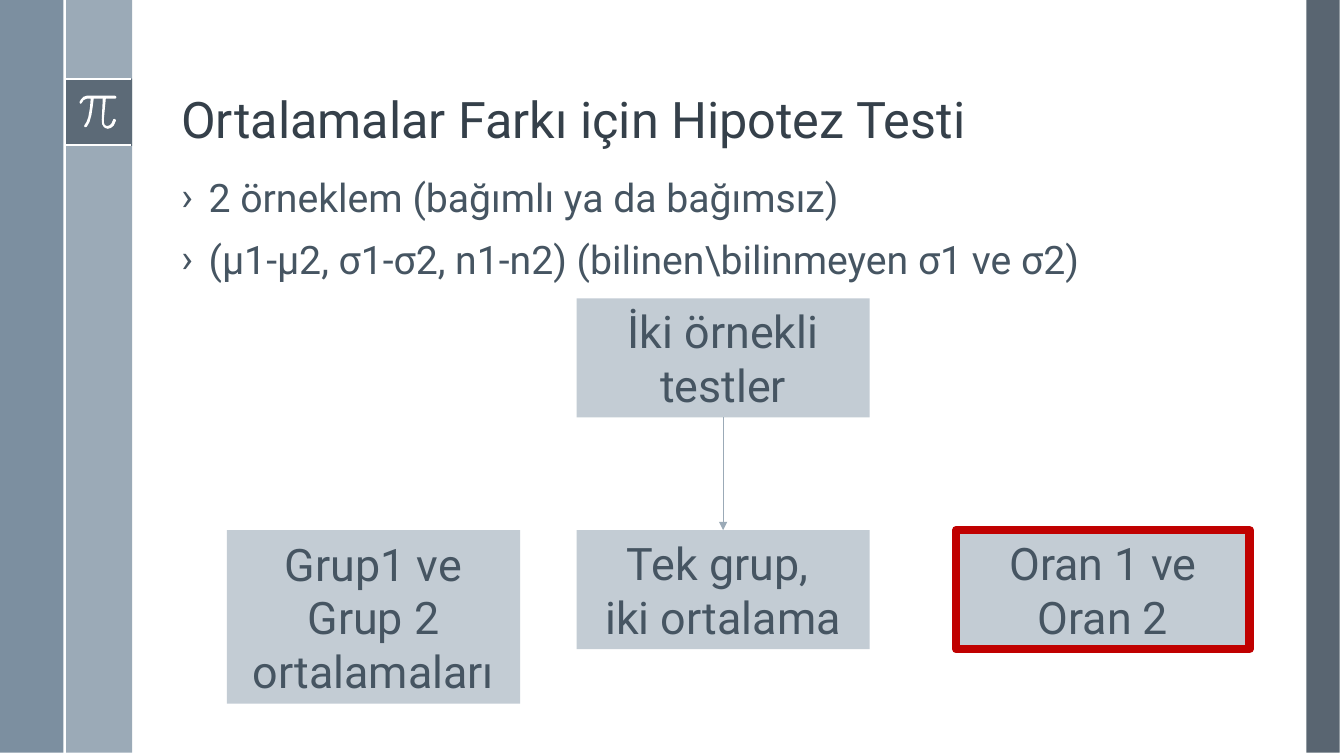
from dataclasses import dataclass

from lxml import etree
from pptx import Presentation
from pptx.dml.color import RGBColor
from pptx.enum.shapes import MSO_CONNECTOR, MSO_SHAPE
from pptx.enum.text import MSO_ANCHOR, MSO_AUTO_SIZE, PP_ALIGN
from pptx.oxml.ns import qn
from pptx.util import Cm, Pt

RECT = MSO_SHAPE.RECTANGLE
STRAIGHT = MSO_CONNECTOR.STRAIGHT
TOP, MIDDLE, BOTTOM = MSO_ANCHOR.TOP, MSO_ANCHOR.MIDDLE, MSO_ANCHOR.BOTTOM
LEFT, CENTER = PP_ALIGN.LEFT, PP_ALIGN.CENTER
GROW = MSO_AUTO_SIZE.SHAPE_TO_FIT_TEXT


@dataclass(frozen=True)
class Theme:
    font: str = "Roboto"
    title_size: int = 36
    body_size: int = 28
    box_size: int = 32
    title: str = "35404A"
    text: str = "465562"
    dark: str = "475562"
    steel: str = "6A8093"
    pale: str = "9BAAB7"
    box: str = "C3CCD4"
    white: str = "FFFFFF"
    highlight: str = "C00000"


THEME = Theme()

# Outline of the pi sign, in thousandths of an inch
PI_UNIT = Cm(0.00254)
PI_OUTLINE = [
    (1140, 950), (860, 950), (827, 962), (803, 988), (790, 1012), (792, 1024),
    (802, 1030), (812, 1022), (830, 993), (860, 980), (900, 980), (893, 1070),
    (876, 1165), (858, 1212), (840, 1240), (835, 1252), (842, 1262), (860, 1260),
    (888, 1212), (908, 1140), (920, 1060), (930, 980), (1020, 980), (1010, 1190),
    (1014, 1232), (1030, 1260), (1048, 1272), (1070, 1278), (1100, 1270),
    (1128, 1247), (1150, 1200), (1148, 1187), (1138, 1180), (1125, 1184),
    (1108, 1222), (1092, 1242), (1070, 1250), (1052, 1248), (1040, 1240),
    (1032, 1220), (1030, 1190), (1050, 980), (1140, 980), (1152, 975), (1155, 965),
    (1150, 954),
]

BOX_WIDTH = 7.39
CENTER_X = 14.53
ROOT_Y, ROW_Y = 7.52, 13.36
SHORT, TALL = 3.0, 4.37


def rgb(code):
    return RGBColor.from_string(code)


def apply_format(target, values):
    for name, value in values.items():
        setattr(target, name, value)


def paint(shape, color, opacity=100):
    """Give a shape a flat fill with no outline or shadow."""
    shape.shadow.inherit = False
    shape.fill.solid()
    shape.fill.fore_color.rgb = rgb(color)
    shape.line.fill.background()
    if opacity < 100:
        color_node = shape.fill._xPr.find(".//" + qn("a:srgbClr"))
        etree.SubElement(color_node, qn("a:alpha"), val=str(opacity * 1000))


def add_panel(slide, x, y, width, height, color, opacity=100):
    panel = slide.shapes.add_shape(RECT, Cm(x), Cm(y), Cm(width), Cm(height))
    paint(panel, color, opacity)
    return panel


def add_rule(slide, start, end, color, weight, arrow=False):
    rule = slide.shapes.add_connector(STRAIGHT, *map(Cm, start + end))
    rule.line.color.rgb = rgb(color)
    rule.line.width = Pt(weight)
    properties = rule.line._get_or_add_ln()
    if arrow:
        etree.SubElement(properties, qn("a:tailEnd"), type="triangle")
    etree.SubElement(properties.getparent(), qn("a:effectLst"))


def write(frame, lines, size, color, frame_format, paragraph_format):
    apply_format(frame, {"word_wrap": True, **frame_format})
    for index, line in enumerate(lines):
        paragraph = frame.add_paragraph() if index else frame.paragraphs[0]
        apply_format(paragraph, paragraph_format)
        run = paragraph.add_run()
        run.text = line
        apply_format(run.font, {"name": THEME.font, "size": Pt(size)})
        run.font.color.rgb = rgb(color)


def add_text(slide, y, height, lines, size, color, anchor, space_before=0):
    text = slide.shapes.add_textbox(Cm(4.32), Cm(y), Cm(27.18), Cm(height))
    write(text.text_frame, lines, size, color, {"vertical_anchor": anchor},
          {"alignment": LEFT, "line_spacing": 0.9, "space_before": Pt(space_before)})
    return text.text_frame


def add_bullets(frame):
    indent = Cm(0.69)
    for paragraph in frame.paragraphs:
        properties = paragraph._p.get_or_add_pPr()
        properties.set("marL", str(indent))
        properties.set("indent", str(-indent))
        etree.SubElement(properties, qn("a:buFont"), typeface=THEME.font)
        etree.SubElement(properties, qn("a:buChar"), char="›")


def add_test_box(slide, x, y, height, lines, highlighted=False):
    box = add_panel(slide, x, y, BOX_WIDTH, height, THEME.box)
    if highlighted:
        box.line.color.rgb = rgb(THEME.highlight)
        box.line.width = Pt(6)
    write(box.text_frame, lines, THEME.box_size, THEME.text,
          {"vertical_anchor": MIDDLE, "auto_size": GROW}, {"alignment": CENTER})


def add_pi_sign(slide):
    builder = slide.shapes.build_freeform(*PI_OUTLINE[0], scale=PI_UNIT)
    builder.add_line_segments(PI_OUTLINE[1:], close=True)
    paint(builder.convert_to_shape(), THEME.white)


def add_side_bands(slide):
    top, height, band, edge = -0.08, 19.05, 1.7, 1.63
    tile_top, tile_bottom = 1.98, 3.66
    add_panel(slide, 32.92, top, 0.84, height, THEME.dark, 90)
    add_panel(slide, edge, top, band, height, THEME.pale)
    add_panel(slide, -0.1, top, band, height, THEME.steel, 88)
    add_panel(slide, edge, tile_top, band, band, THEME.dark, 75)
    for y in (tile_top, tile_bottom):
        add_rule(slide, (edge, y), (3.31, y), THEME.white, 1.5)
    add_pi_sign(slide)
    add_rule(slide, (edge, top), (edge, top + height), THEME.white, 1.5)


def add_test_diagram(slide):
    middle = CENTER_X + BOX_WIDTH / 2
    add_test_box(slide, CENTER_X, ROOT_Y, SHORT, ["İki örnekli testler"])
    add_test_box(slide, CENTER_X, ROW_Y, SHORT, ["Tek grup, ", "iki ortalama"])
    add_rule(slide, (middle, ROOT_Y + SHORT), (middle, ROW_Y), THEME.pale, 0.5, arrow=True)
    add_test_box(slide, 5.72, ROW_Y, TALL, ["Grup1 ve Grup 2 ortalamaları"])
    add_test_box(slide, 24.1, ROW_Y, SHORT, ["Oran 1 ve Oran 2"], highlighted=True)


def main():
    deck = Presentation()
    apply_format(deck, {"slide_width": Cm(33.87), "slide_height": Cm(19.05)})
    slide = deck.slides.add_slide(deck.slide_layouts[6])
    add_side_bands(slide)
    add_text(slide, 0.43, 3.45, ["Ortalamalar Farkı için Hipotez Testi"],
             THEME.title_size, THEME.title, BOTTOM)
    points = add_text(slide, 4.37, 12.7, [
        "2 örneklem (bağımlı ya da bağımsız)",
        "(µ1-µ2, σ1-σ2, n1-n2) (bilinen\\bilinmeyen σ1 ve σ2)",
    ], THEME.body_size, THEME.text, TOP, space_before=14)
    add_bullets(points)
    add_test_diagram(slide)
    deck.save("out.pptx")


if __name__ == "__main__":
    main()
